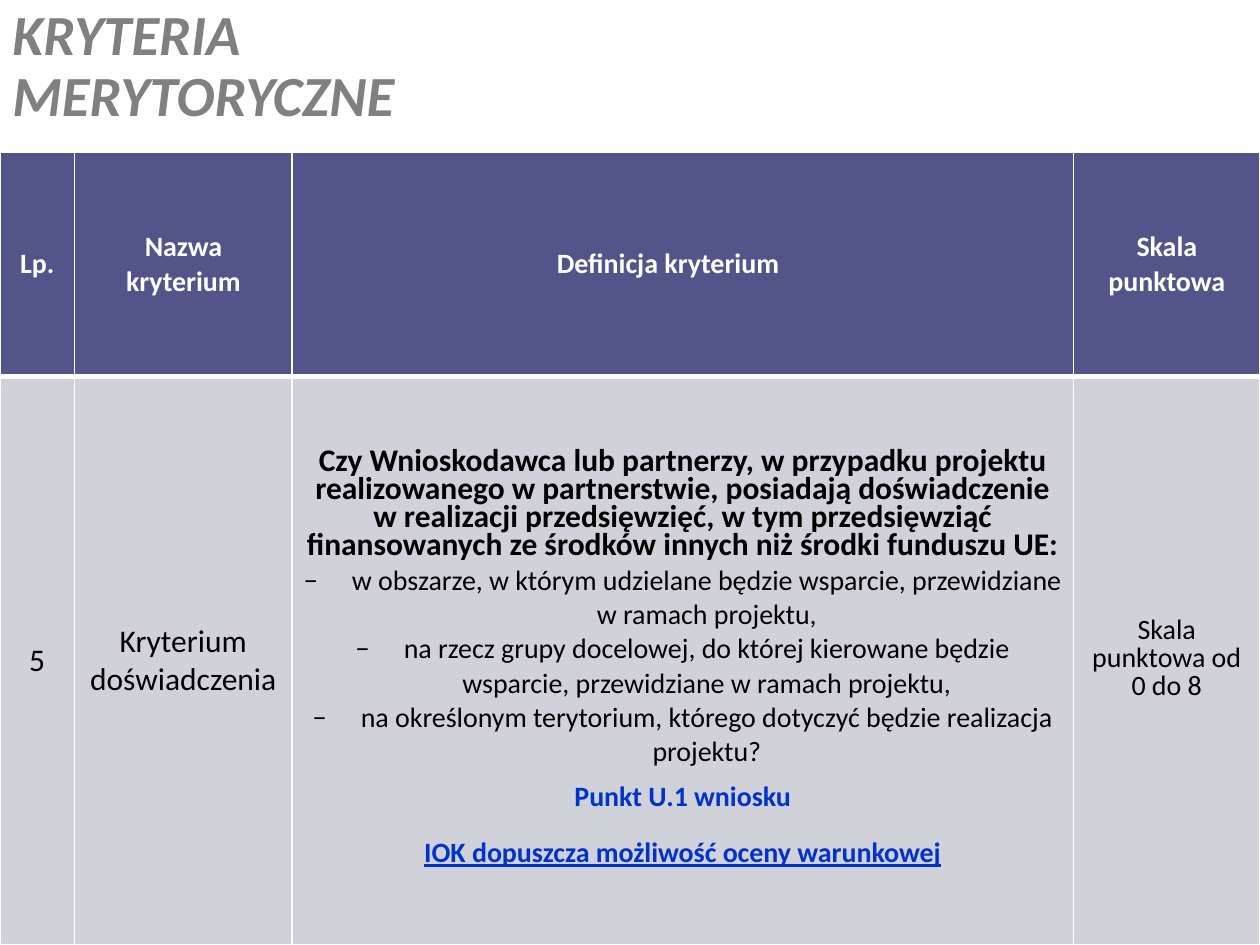
import pptx
import pptx.dml.color
import pptx.enum.text
import pptx.oxml.ns
import pptx.util
from lxml import etree
from pptx.util import Cm, Pt

FONT = "Calibri"
WHITE, BLACK, GREY, BLUE = "FFFFFF", "000000", "808080", "0033CC"
HEADER_FILL, BODY_FILL = "53548A", "D1D1DA"

TITLE = ["KRYTERIA", "MERYTORYCZNE"]
COLUMN_WIDTHS = [1.5, 4.39, 15.75, 3.76]
ROW_HEIGHTS = [4.52, 11.46]
HEADINGS = ["Lp.", "Nazwa kryterium", "Definicja kryterium", "Skala punktowa"]
HEADING_RIGHT_INSETS = [0.25, 0.25, 0.85, 0.25]
LEAD = dict(size=18, bold=True, leading=16)
DASH = dict(size=16, indent=0.97, bullet="−")
CRITERION = [
    [("5", dict(size=18))],
    [("Kryterium doświadczenia", dict(size=18))],
    [
        ("Czy Wnioskodawca lub partnerzy, w przypadku projektu realizowanego w partnerstwie, "
         "posiadają doświadczenie w realizacji przedsięwzięć, w tym przedsięwziąć finansowanych "
         "ze środków innych niż środki funduszu UE:", LEAD),
        ("w obszarze, w którym udzielane będzie wsparcie, przewidziane w ramach projektu,", DASH),
        ("na rzecz grupy docelowej, do której kierowane będzie wsparcie, "
         "przewidziane w ramach projektu,", DASH),
        ("na określonym terytorium, którego dotyczyć będzie realizacja projektu?",
         dict(DASH, after=6)),
        ("Punkt U.1 wniosku", dict(size=16, bold=True, color=BLUE, indent=0.97, after=6)),
        ("IOK dopuszcza możliwość oceny warunkowej",
         dict(size=16, bold=True, color=BLUE, underline=True, leading=16, before=10)),
    ],
    [("Skala punktowa od 0 do 8", dict(size=16, leading=16))],
]


def rgb(value):
    return pptx.dml.color.RGBColor.from_string(value)


def child(parent, tag, **attributes):
    return etree.SubElement(parent, pptx.oxml.ns.qn(tag), attributes)


def write(frame, paragraphs, align):
    for index, (text, style) in enumerate(paragraphs):
        paragraph = frame.add_paragraph() if index else frame.paragraphs[0]
        paragraph.alignment = align
        if "indent" in style:
            properties = paragraph._p.get_or_add_pPr()
            properties.set("marL", str(Cm(style["indent"])))
            properties.set("indent", str(-Cm(style["indent"])))
            if "bullet" in style:
                child(properties, "a:buFont", typeface=FONT)
                child(properties, "a:buChar", char=style["bullet"])
            else:
                child(properties, "a:buNone")
        if "leading" in style:
            paragraph.line_spacing = Pt(style["leading"])
        if "spacing" in style:
            paragraph.line_spacing = style["spacing"]
        if "before" in style:
            paragraph.space_before = Pt(style["before"])
        if "after" in style:
            paragraph.space_after = Pt(style["after"])
        run = paragraph.add_run()
        run.text = text
        run.font.name = FONT
        run.font.size = Pt(style["size"])
        run.font.bold = style.get("bold", False)
        run.font.italic = style.get("italic", False)
        run.font.underline = style.get("underline", False)
        run.font.color.rgb = rgb(style.get("color", BLACK))


def finish_cell(cell, fill, borders):
    cell.vertical_anchor = pptx.enum.text.MSO_ANCHOR.MIDDLE
    properties = cell._tc.get_or_add_tcPr()
    for side, width in zip("LRTB", borders):
        line = child(properties, "a:ln" + side, w=str(Pt(width)))
        child(child(line, "a:solidFill"), "a:srgbClr", val=WHITE)
    cell.fill.solid()
    cell.fill.fore_color.rgb = rgb(fill)


def main():
    deck = pptx.Presentation()
    deck.slide_width, deck.slide_height = Cm(25.4), Cm(19.05)
    slide = deck.slides.add_slide(deck.slide_layouts[6])
    align = pptx.enum.text.PP_ALIGN

    criteria = slide.shapes.add_table(
        len(ROW_HEIGHTS), len(COLUMN_WIDTHS), 0, Cm(3.07),
        Cm(sum(COLUMN_WIDTHS)), Cm(sum(ROW_HEIGHTS))).table
    for row, height in zip(criteria.rows, ROW_HEIGHTS):
        row.height = Cm(height)
    for index, width in enumerate(COLUMN_WIDTHS):
        criteria.columns[index].width = Cm(width)
        heading, entry = criteria.cell(0, index), criteria.cell(1, index)
        heading.margin_right = Cm(HEADING_RIGHT_INSETS[index])
        write(heading.text_frame,
              [(HEADINGS[index], dict(size=16, bold=True, color=WHITE))], align.CENTER)
        finish_cell(heading, HEADER_FILL, (1, 1, 1, 3))
        if index:
            entry.margin_left = entry.margin_right = Cm(0.18)
            entry.margin_top = entry.margin_bottom = 0
        write(entry.text_frame, CRITERION[index], align.CENTER)
        finish_cell(entry, BODY_FILL, (1, 1, 3, 1))

    title = slide.shapes.add_textbox(0, 0, Cm(24.13), Cm(2.72)).text_frame
    title.word_wrap = True
    title.vertical_anchor = pptx.enum.text.MSO_ANCHOR.MIDDLE
    title_style = dict(size=32.4, bold=True, italic=True, color=GREY, spacing=0.9)
    write(title, [(line, title_style) for line in TITLE], align.LEFT)

    deck.save("out.pptx")


if __name__ == "__main__":
    main()
